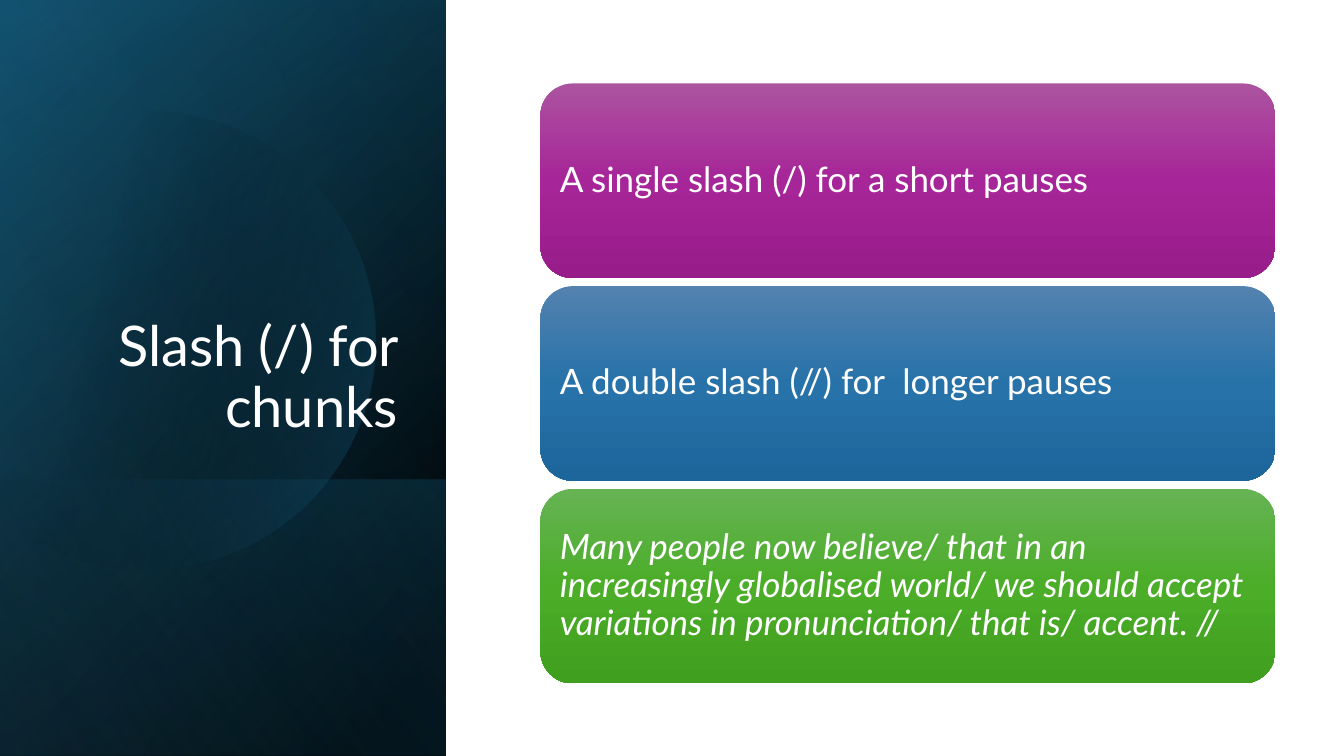
import math
import pptx
import pptx.dml.color
import pptx.enum.shapes
import pptx.enum.text
import pptx.oxml
import pptx.oxml.ns
import pptx.util

Pt = pptx.util.Pt
Kind = pptx.enum.shapes.MSO_SHAPE
Align = pptx.enum.text.PP_ALIGN
Anchor = pptx.enum.text.MSO_ANCHOR


def color(code):
    return pptx.dml.color.RGBColor.from_string(code)


def write(frame, text, font="Lato", size=25, ink="FFFFFF", italic=False,
          align=Align.LEFT, anchor=Anchor.MIDDLE):
    frame.word_wrap = True
    frame.auto_size = pptx.enum.text.MSO_AUTO_SIZE.NONE
    frame.vertical_anchor = anchor
    frame.margin_left = frame.margin_right = Pt(7.2)
    frame.margin_top = frame.margin_bottom = Pt(7.2)
    para = frame.paragraphs[0]
    para.alignment = align
    para.line_spacing = 0.9
    run = para.add_run()
    run.text = text
    run.font.name = font
    run.font.size = Pt(size)
    run.font.italic = italic
    run.font.color.rgb = color(ink)


class Deck:
    def __init__(self, wide, high):
        self.show = pptx.Presentation()
        self.show.slide_width = Pt(wide)
        self.show.slide_height = Pt(high)
        self.slide = self.show.slides.add_slide(self.show.slide_layouts[5])
        self.slide.background.fill.solid()
        self.slide.background.fill.fore_color.rgb = color("FFFFFF")

    def blend(self, shape, stops, angle):
        shape.shadow.inherit = False
        shape.line.fill.background()
        shape.fill.gradient()
        shape.fill.gradient_angle = 360 - angle
        qn = pptx.oxml.ns.qn
        rows = shape.fill._xPr.find(qn("a:gradFill")).find(qn("a:gsLst"))
        for old in list(rows):
            rows.remove(old)
        for place, code, alpha in stops:
            rows.append(pptx.oxml.parse_xml(
                f'<a:gs {pptx.oxml.ns.nsdecls("a")} pos="{place * 1000}">'
                f'<a:srgbClr val="{code}"><a:alpha val="{alpha * 1000}"/>'
                '</a:srgbClr></a:gs>'))

    def block(self, box, stops, angle, kind=Kind.RECTANGLE):
        shape = self.slide.shapes.add_shape(kind, *map(Pt, box))
        self.blend(shape, stops, angle)
        return shape

    def disc(self, x, y, radius, stops, angle):
        edge = math.acos(-x / radius)
        turns = [edge * (step / 60 - 1) for step in range(121)]
        dots = [(Pt(x + radius * math.cos(t)), Pt(y + radius * math.sin(t)))
                for t in turns]
        form = self.slide.shapes.build_freeform(*dots[0])
        form.add_line_segments(dots[1:], close=True)
        self.blend(form.convert_to_shape(), stops, angle)

    def title(self, box, text):
        head = self.slide.shapes.title
        head.left, head.top, head.width, head.height = map(Pt, box)
        write(head.text_frame, text, size=40, align=Align.RIGHT,
              anchor=Anchor.BOTTOM)
        tree = self.slide.shapes._spTree
        tree.remove(head._element)
        tree.append(head._element)

    def card(self, box, text, tones, italic):
        stops = [(50 * i, tone, 100) for i, tone in enumerate(tones)]
        shape = self.block(box, stops, 90, Kind.ROUNDED_RECTANGLE)
        write(shape.text_frame, text, italic=italic)


def main():
    deck = Deck(960, 540)
    panel = (0, 0, 318.5, 540)
    foot = (0, 342.7, 318.5, 197.3)
    deck.block(panel, [(8, "000000", 100), (100, "104862", 100)], 220)
    deck.block(panel, [(0, "000000", 0), (99, "156082", 46)], 240)
    deck.block(foot, [(2, "156082", 29), (100, "000000", 30)], 140)
    deck.disc(104, 243, 164, [(29, "000000", 0), (100, "156082", 43)], 14)
    deck.block(panel, [(0, "000000", 0), (99, "46B1E1", 11)], 150)
    deck.title((46, 132.5, 245.5, 188.6), "Slash (/) for chunks")

    cards = [
        ("A single slash (/) for a short pauses",
         ("AC53A0", "A62598", "991C8B"), False),
        ("A double slash (//) for  longer pauses",
         ("5382AF", "2772A9", "1D669C"), False),
        ("Many people now believe/ that in an increasingly globalised world/ "
         "we should accept variations in pronunciation/ that is/ accent. //",
         ("66B354", "4BAD28", "409F1E"), True),
    ]
    for i, (text, tones, italic) in enumerate(cards):
        deck.card((386, 59.6 + 144.8 * i, 525, 139), text, tones, italic)
    deck.show.save("out.pptx")


if __name__ == "__main__":
    main()
